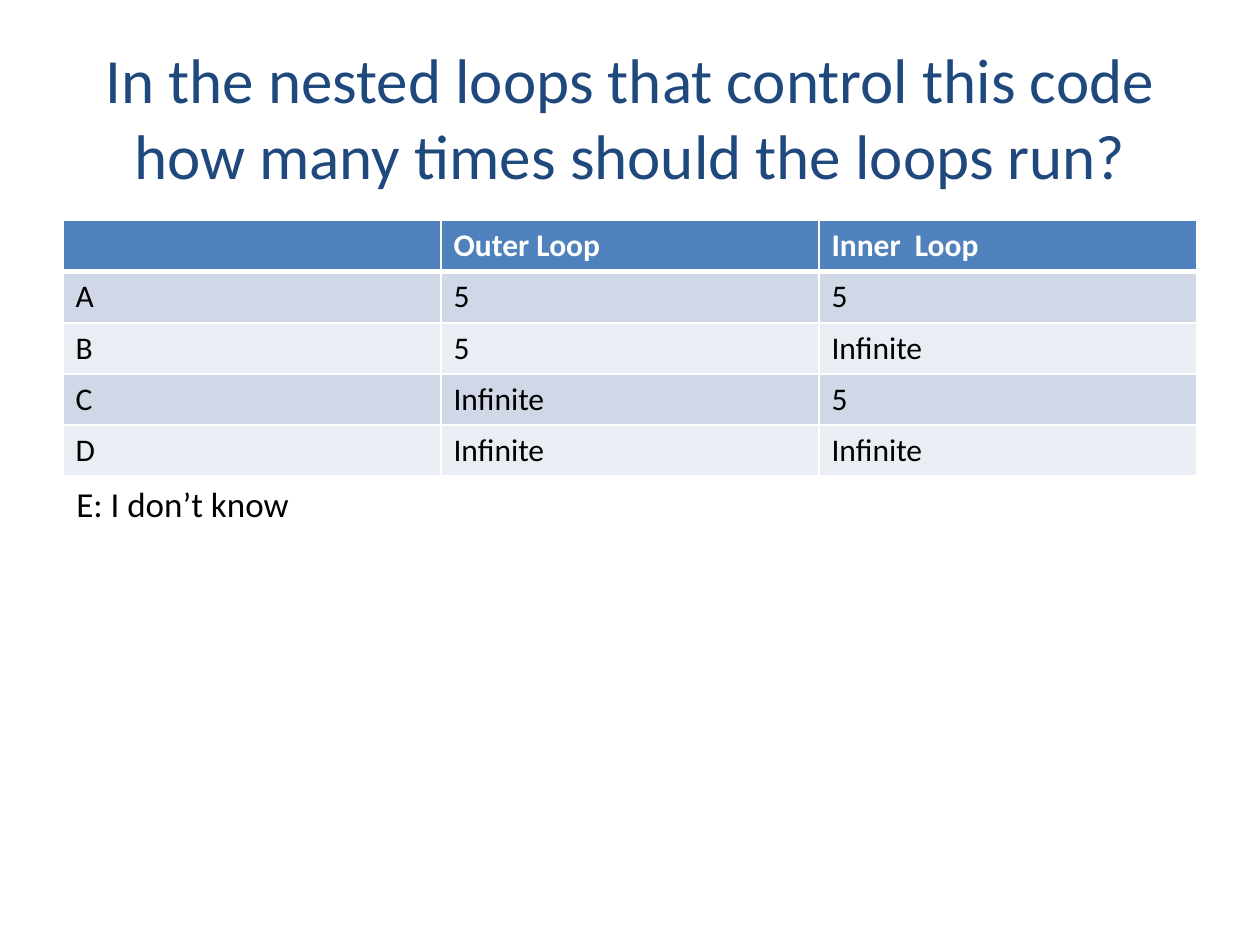
"""Build a quiz slide asking how many times two nested loops should run."""
from lxml.etree import SubElement
from pptx import Presentation
from pptx.dml.color import RGBColor as Rgb
from pptx.enum.text import MSO_ANCHOR as Anchor, MSO_AUTO_SIZE as Fit, PP_ALIGN as Align
from pptx.oxml.ns import qn
from pptx.util import Inches, Pt

COLORS = {"title": "1F497D", "header": "4F81BD", "odd": "D0D8E8",
          "even": "E9EDF4", "light": "FFFFFF", "dark": "000000"}
ANSWERS = [("", "Outer Loop", "Inner  Loop"),
           ("A", "5", "5"),
           ("B", "5", "Infinite"),
           ("C", "Infinite", "5"),
           ("D", "Infinite", "Infinite")]
MARGIN, COLUMN, ROW, TABLE_TOP = Inches(0.5), Inches(3), Inches(0.406), Inches(1.75)


def style_text(paragraph, size, color, bold=False, align=Align.LEFT):
    paragraph.alignment = align
    for key, value in {"name": "Calibri", "size": Pt(size), "bold": bold}.items():
        setattr(paragraph.font, key, value)
    paragraph.font.color.rgb = Rgb.from_string(COLORS[color])


def add_border(cell, side, width):
    line = SubElement(cell._tc.get_or_add_tcPr(), qn(f"a:ln{side}"), w=str(Pt(width)))
    SubElement(SubElement(line, qn("a:solidFill")), qn("a:srgbClr"), val=COLORS["light"])


deck = Presentation()
deck.slide_width, deck.slide_height = Inches(10), Inches(7.5)
slide = deck.slides.add_slide(deck.slide_layouts[5])

question = slide.shapes.title
for key, value in {"left": MARGIN, "top": Inches(0.3),
                   "width": 3 * COLUMN, "height": Inches(1.25)}.items():
    setattr(question, key, value)
question.text_frame.text = ("In the nested loops that control this code "
                            "how many times should the loops run?")
question.text_frame.auto_size = Fit.NONE
question.text_frame.vertical_anchor = Anchor.MIDDLE
style_text(question.text_frame.paragraphs[0], 36, "title", align=Align.CENTER)

answers = slide.shapes.add_table(len(ANSWERS), 3, MARGIN, TABLE_TOP,
                                 3 * COLUMN, len(ANSWERS) * ROW).table
for row, words in enumerate(ANSWERS):
    answers.rows[row].height = ROW
    band = "header" if row == 0 else "odd" if row % 2 else "even"
    for column, word in enumerate(words):
        cell = answers.cell(row, column)
        cell.text = word
        style_text(cell.text_frame.paragraphs[0], 18,
                   "dark" if row else "light", bold=row == 0)
        for side in "LRTB":
            add_border(cell, side, 3 if (row, side) in [(0, "B"), (1, "T")] else 1)
        cell.fill.solid()
        cell.fill.fore_color.rgb = Rgb.from_string(COLORS[band])

fallback = slide.shapes.add_textbox(MARGIN, TABLE_TOP + len(ANSWERS) * ROW,
                                    Inches(1.9), Inches(0.44)).text_frame
fallback.text = "E: I don’t know"
fallback.word_wrap = False
fallback.auto_size = Fit.SHAPE_TO_FIT_TEXT
style_text(fallback.paragraphs[0], 20, "dark", align=Align.CENTER)

deck.save("out.pptx")
